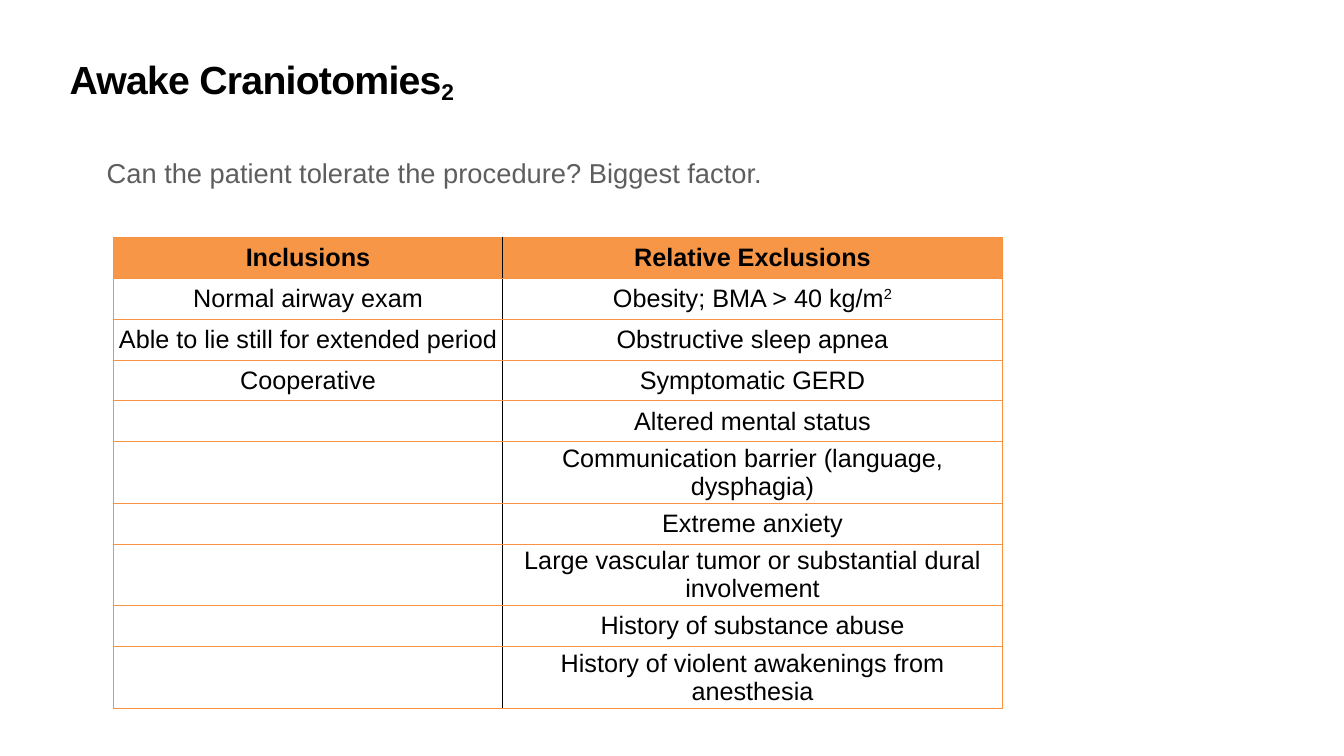
import itertools

import lxml.etree
import pptx
import pptx.dml.color
import pptx.enum.text
import pptx.oxml.ns
import pptx.util

RGBColor = pptx.dml.color.RGBColor
BLACK = RGBColor(0x00, 0x00, 0x00)
GREY = RGBColor(0x5E, 0x5E, 0x5E)
ORANGE = RGBColor(0xF7, 0x96, 0x46)
RULE = RGBColor(0xF6, 0x92, 0x40)

WIDTH, HEIGHT = 26.67, 15
TITLE_BOX = (1.32, 1.18, 24.03, 1.57)
QUESTION_BOX = (1.45, 3.06, 14.49, 0.73)
TABLE_BOX = (2.25, 4.7, 17.64, 8.13)
COLUMN_SHARES = (0.438, 0.562)

HEADINGS = ("Inclusions", "Relative Exclusions")
INCLUSIONS = (
    "Normal airway exam",
    "Able to lie still for extended period",
    "Cooperative",
)
EXCLUSIONS = (
    ("Obesity; BMA > 40 kg/m", "2"),
    "Obstructive sleep apnea",
    "Symptomatic GERD",
    "Altered mental status",
    "Communication barrier (language, dysphagia)",
    "Extreme anxiety",
    "Large vascular tumor or substantial dural involvement",
    "History of substance abuse",
    "History of violent awakenings from anesthesia",
)


def inches(box):
    """Convert a box of numbers to lengths."""
    return [pptx.util.Inches(length) for length in box]


def write(frame, text, size=36, color=BLACK, bold=False, centred=True,
          shift=0, spacing=0):
    """Write text; a pair gives a main part and a raised or lowered part."""
    para = frame.paragraphs[0]
    align = pptx.enum.text.PP_ALIGN
    para.alignment = align.CENTER if centred else align.LEFT
    parts = (text,) if isinstance(text, str) else text
    for part, baseline in zip(parts, (0, shift)):
        span = para.add_run()
        span.text = part
        span.font.name = "Arial"
        span.font.size = pptx.util.Pt(size)
        span.font.bold = bold
        span.font.color.rgb = color
        properties = span.font._element
        if baseline:
            properties.set("baseline", str(baseline * 1000))
        if spacing:
            properties.set("spc", str(round(spacing * 100)))
    return para


def set_margins(holder, margin):
    """Give a text frame or cell the same margin on each side."""
    for side in ("left", "right", "top", "bottom"):
        setattr(holder, f"margin_{side}", pptx.util.Inches(margin))


def set_border(cell, side, color, width):
    """Draw one side of a cell."""
    name = pptx.oxml.ns.qn
    line = lxml.etree.SubElement(
        cell._tc.get_or_add_tcPr(), name(f"a:ln{side}"),
        w=str(pptx.util.Pt(width)))
    fill = lxml.etree.SubElement(line, name("a:solidFill"))
    lxml.etree.SubElement(fill, name("a:srgbClr"), val=str(color))


def add_title(page, box):
    """Fill the title placeholder."""
    title = page.shapes.title
    title.left, title.top, title.width, title.height = inches(box)
    frame = title.text_frame
    set_margins(frame, 0.06)
    frame.vertical_anchor = pptx.enum.text.MSO_ANCHOR.TOP
    para = write(frame, ("Awake Craniotomies", "2"), size=56, bold=True,
                 centred=False, shift=-16, spacing=-1.1)
    para.line_spacing = 0.8


def add_question(page, box):
    """Place the question above the table."""
    frame = page.shapes.add_textbox(*inches(box)).text_frame
    frame.word_wrap = True
    frame.vertical_anchor = pptx.enum.text.MSO_ANCHOR.MIDDLE
    set_margins(frame, 0.06)
    write(frame, "Can the patient tolerate the procedure? Biggest factor. ",
          size=39, color=GREY)


def format_cell(cell, text, heading, first):
    """Set the borders, fill and text of one cell."""
    divider, edge = (BLACK, 2), (RULE, 1)
    set_border(cell, "L", *(edge if first else divider))
    set_border(cell, "R", *(divider if first else edge))
    set_border(cell, "T", *edge)
    set_border(cell, "B", *edge)
    if heading:
        cell.fill.solid()
        cell.fill.fore_color.rgb = ORANGE
    else:
        cell.fill.background()
    cell.vertical_anchor = pptx.enum.text.MSO_ANCHOR.MIDDLE
    set_margins(cell, 0.05)
    if text:
        write(cell.text_frame, text, bold=heading, shift=31)


def add_criteria(page, box):
    """Build the table of inclusions and exclusions."""
    rows = [HEADINGS, *itertools.zip_longest(INCLUSIONS, EXCLUSIONS)]
    table = page.shapes.add_table(
        len(rows), len(HEADINGS), *inches(box)).table
    table.first_row = table.horz_banding = False
    for column, share in zip(table.columns, COLUMN_SHARES):
        column.width = pptx.util.Inches(box[2] * share)
    for row, texts in enumerate(rows):
        for column, text in enumerate(texts):
            format_cell(table.cell(row, column), text,
                        heading=row == 0, first=column == 0)


def main():
    """Build and save the deck."""
    deck = pptx.Presentation()
    deck.slide_width, deck.slide_height = inches((WIDTH, HEIGHT))
    page = deck.slides.add_slide(deck.slide_layouts.get_by_name("Title Only"))
    add_title(page, TITLE_BOX)
    add_criteria(page, TABLE_BOX)
    add_question(page, QUESTION_BOX)
    deck.save("out.pptx")


if __name__ == "__main__":
    main()
